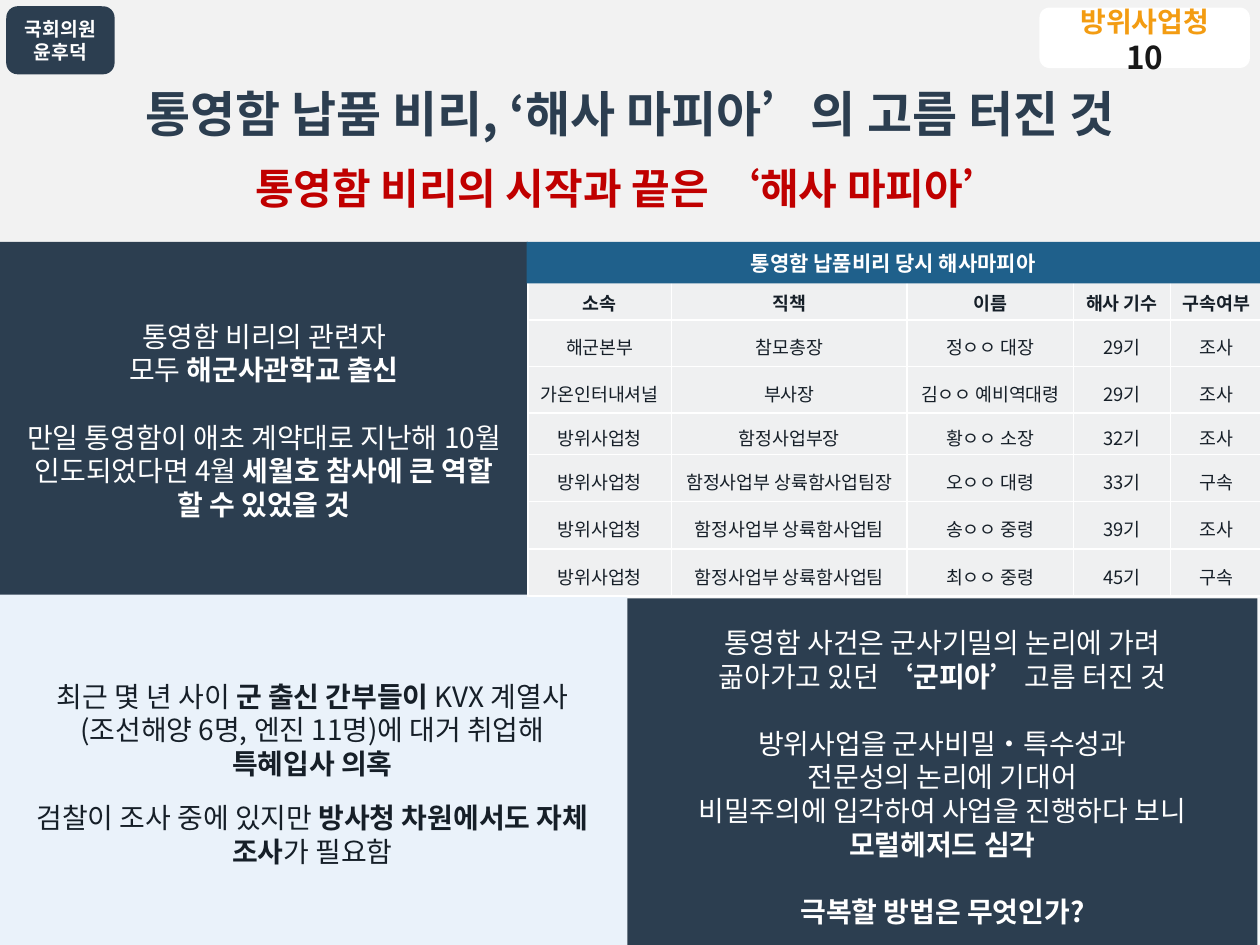
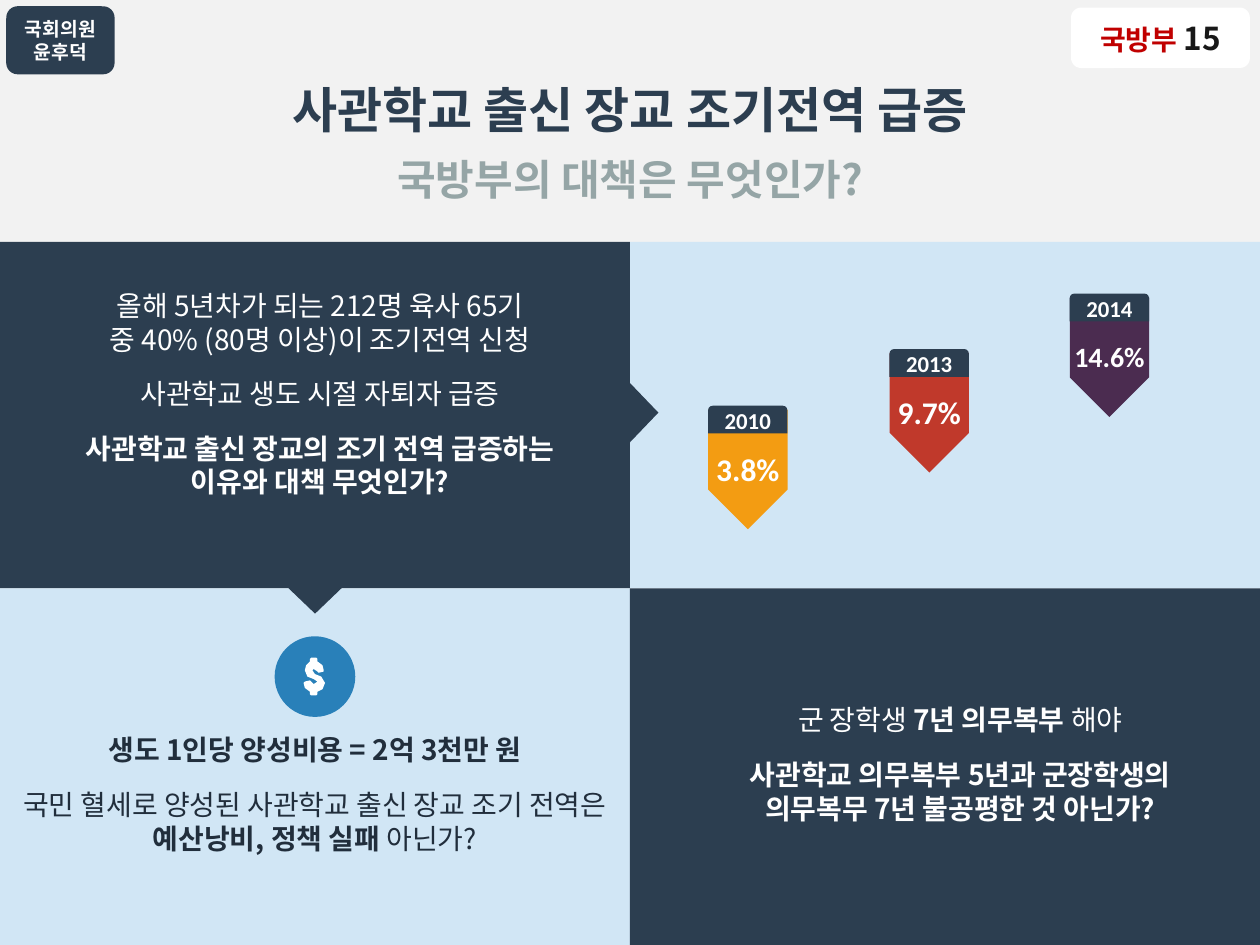
from typing import Any, NamedTuple, Optional

import pptx
import pptx.dml.color
import pptx.enum.shapes
import pptx.enum.text
import pptx.oxml.ns
import pptx.util
from lxml import etree

Inches = pptx.util.Inches
Pt = pptx.util.Pt
RGBColor = pptx.dml.color.RGBColor
Kind = pptx.enum.shapes.MSO_SHAPE
Anchor = pptx.enum.text.MSO_ANCHOR
Align = pptx.enum.text.PP_ALIGN
qn = pptx.oxml.ns.qn

PAPER = RGBColor(0xF9, 0xF9, 0xF9)
BAND = RGBColor(0xF2, 0xF2, 0xF2)
NAVY = RGBColor(0x2C, 0x3E, 0x50)
WHITE = RGBColor(0xFF, 0xFF, 0xFF)
RED = RGBColor(0xC0, 0x00, 0x00)
GRAY = RGBColor(0x95, 0xA5, 0xA6)
AMBER = RGBColor(0xF3, 0x9C, 0x12)
BRICK = RGBColor(0xC0, 0x39, 0x2B)
PLUM = RGBColor(0x4B, 0x2C, 0x50)
BLUE = RGBColor(0x29, 0x80, 0xB9)
STEEL = RGBColor(0x1F, 0x60, 0x8B)
ICE = RGBColor(0xEA, 0xF2, 0xFA)
SKY = RGBColor(0xD1, 0xE6, 0xF5)
CELL = RGBColor(0xEF, 0xF0, 0xF1)
INK = RGBColor(0x16, 0x1F, 0x28)
SLATE = RGBColor(0x21, 0x2E, 0x3C)
COAL = RGBColor(0x18, 0x18, 0x18)
HANGUL = "Noto Sans CJK KR"
LATIN = "Calibri"
LINE = 1.2
BLANK = 19.2


class Run(NamedTuple):
    text: str
    bold: bool = False
    size: Optional[float] = None
    color: Optional[RGBColor] = None


class Para(NamedTuple):
    runs: tuple[Run, ...]
    gap: float = 0


class Style(NamedTuple):
    size: float
    color: RGBColor
    font: str = HANGUL
    lead: float = LINE


class Box(NamedTuple):
    left: float
    top: float
    width: float
    height: float
    fill: Optional[RGBColor] = None
    kind: Any = Kind.RECTANGLE
    turn: float = 0


class Flag(NamedTuple):
    left: float
    top: float
    year: str
    rate: str
    size: float
    fill: RGBColor


BODY = Style(16, WHITE)


def line(*runs: Run, gap: float = 0) -> Para:
    return Para(runs, gap)


def bold(text: str, size: Optional[float] = None, color: Optional[RGBColor] = None) -> Run:
    return Run(text, True, size, color)


def write(frame: Any, paras: list[Para], style: Style) -> None:
    for index, para in enumerate(paras):
        item = frame.add_paragraph() if index else frame.paragraphs[0]
        item.alignment = Align.CENTER
        item.line_spacing = Pt(max(run.size or style.size for run in para.runs) * style.lead)
        item.space_before = Pt(para.gap)
        for run in para.runs:
            for row, part in enumerate(run.text.split("\n")):
                if row:
                    item.add_line_break()
                if not part:
                    continue
                piece = item.add_run()
                piece.text = part
                font = piece.font
                font.size = Pt(run.size or style.size)
                font.bold = run.bold
                font.color.rgb = run.color or style.color
                font.name = style.font
                etree.SubElement(font._element, qn("a:ea")).set("typeface", style.font)


def paint(shape: Any, fill: RGBColor) -> None:
    shape.shadow.inherit = False
    shape.fill.solid()
    shape.fill.fore_color.rgb = fill
    shape.line.fill.background()


def draw(slide: Any, box: Box, paras: Optional[list[Para]] = None, style: Style = BODY,
         head: float = 0.05, side: float = 0.1, anchor: Any = Anchor.MIDDLE) -> None:
    area = [Inches(value) for value in box[:4]]
    if box.fill is None:
        shape = slide.shapes.add_textbox(*area)
    else:
        shape = slide.shapes.add_shape(box.kind, *area)
        paint(shape, box.fill)
        shape.rotation = box.turn
    if paras:
        frame = shape.text_frame
        frame.word_wrap = True
        frame.vertical_anchor = anchor
        frame.margin_top = Inches(head)
        frame.margin_left = Inches(side)
        write(frame, paras, style)


def start(deck: Any, top: float, title: str, sub: str, low: float, tint: RGBColor) -> Any:
    slide = deck.slides.add_slide(deck.slide_layouts[6])
    slide.background.fill.solid()
    slide.background.fill.fore_color.rgb = PAPER
    draw(slide, Box(0, 0, 10, 2, BAND))
    draw(slide, Box(0.05, 0.05, 0.86, 0.54, NAVY, Kind.ROUNDED_RECTANGLE),
         [line(bold("국회의원")), line(bold("윤후덕"))], Style(11, WHITE))
    draw(slide, Box(0, top, 10, 0.57), [line(bold(title))], Style(28, NAVY))
    draw(slide, Box(0, low, 10, 0.5), [line(bold(sub))], Style(24, tint))
    return slide


def badge(slide: Any, left: float, name: str, page: str, tint: RGBColor) -> None:
    draw(slide, Box(left, 0.06, 9.92 - left, 0.48, WHITE, Kind.ROUNDED_RECTANGLE),
         [line(bold(name), bold(page, 18, COAL))], Style(16, tint))


def edge(cell: Any) -> None:
    props = cell._tc.get_or_add_tcPr()
    for index, side in enumerate(("lnL", "lnR", "lnT", "lnB")):
        rule = etree.Element(qn("a:" + side), w=str(Pt(1)))
        fill = etree.SubElement(rule, qn("a:solidFill"))
        etree.SubElement(fill, qn("a:srgbClr"), val=str(WHITE))
        props.insert(index, rule)


def roster(slide: Any) -> None:
    agency, team = "방위사업청", "함정사업부 상륙함사업팀"
    rows = [
        ("소속", "직책", "이름", "해사 기수", "구속여부"),
        ("해군본부", "참모총장", "정ㅇㅇ 대장", "29기", "조사"),
        ("가온인터내셔널", "부사장", "김ㅇㅇ 예비역대령", "29기", "조사"),
        (agency, "함정사업부장", "황ㅇㅇ 소장", "32기", "조사"),
        (agency, team + "장", "오ㅇㅇ 대령", "33기", "구속"),
        (agency, team, "송ㅇㅇ 중령", "39기", "조사"),
        (agency, team, "최ㅇㅇ 중령", "45기", "구속"),
    ]
    wide = (1.14, 1.87, 1.32, 0.77, 0.73)
    tall = (0.34, 0.37, 0.37, 0.33, 0.37, 0.38, 0.37)
    table = slide.shapes.add_table(len(rows), len(wide), Inches(4.19), Inches(2.2),
                                   Inches(sum(wide)), Inches(sum(tall))).table
    for column, width in zip(table.columns, wide):
        column.width = Inches(width)
    for band, height in zip(table.rows, tall):
        band.height = Inches(height)
    for y, row in enumerate(rows):
        for x, text in enumerate(row):
            cell = table.cell(y, x)
            cell.fill.solid()
            cell.fill.fore_color.rgb = CELL
            cell.vertical_anchor = Anchor.MIDDLE
            cell.margin_left = cell.margin_right = Inches(0.07)
            cell.margin_top = Inches(0.06)
            cell.margin_bottom = Inches(0.02)
            write(cell.text_frame, [line(Run(text, y == 0))], Style(10.5, INK, lead=LINE * 1.3))
            edge(cell)


def navy(deck: Any) -> None:
    slide = start(deck, 0.61, "통영함 납품 비리, ‘해사 마피아’의 고름 터진 것",
                  "통영함 비리의 시작과 끝은 ‘해사 마피아’", 1.24, RED)
    draw(slide, Box(0, 1.92, 4.19, 2.83, NAVY), [
        line(Run("통영함 비리의 관련자")),
        line(Run("모두 "), bold("해군사관학교 출신")),
        line(Run("만일 통영함이 애초 계약대로 지난해 10월 인도되었다면 4월 "),
             bold("세월호 참사에 큰 역할\n할 수 있었을 것"), gap=BLANK),
    ])
    draw(slide, Box(-0.02, 4.72, 5, 2.84, ICE), [
        line(Run("최근 몇 년 사이 "), bold("군 출신 간부들이 "),
             Run("KVX 계열사\n(조선해양 6명, 엔진 11명)에 대거 취업해\n"), bold("특혜입사 의혹")),
        line(Run("검찰이 조사 중에 있지만 "), bold("방사청 차원에서도 자체 조사"),
             Run("가 필요함"), gap=12),
    ], Style(16, INK))
    draw(slide, Box(4.98, 4.75, 5, 2.83, NAVY), [
        line(Run("통영함 사건은 군사기밀의 논리에 가려")),
        line(Run("곪아가고 있던 "), bold("‘군피아’ "), Run("고름 터진 것")),
        line(Run("방위사업을 군사비밀•특수성과"), gap=BLANK),
        line(Run("전문성의 논리에 기대어")),
        line(Run("비밀주의에 입각하여 사업을 진행하다 보니\n"), bold("모럴헤저드 심각")),
        line(bold("극복할 방법은 무엇인가?"), gap=BLANK),
    ])
    roster(slide)
    draw(slide, Box(4.18, 1.92, 5.82, 0.33, STEEL),
         [line(bold("통영함 납품비리 당시 해사마피아"))], Style(12, WHITE))
    badge(slide, 8.25, "방위사업청\n", "10", AMBER)


def pennant(slide: Any, flag: Flag) -> None:
    draw(slide, Box(flag.left - 0.16, flag.top + 0.19, 0.95, 0.63, flag.fill, Kind.PENTAGON, 90))
    draw(slide, Box(flag.left, flag.top, 0.63, 0.22, NAVY, Kind.ROUND_2_SAME_RECTANGLE),
         [line(bold(flag.year))], Style(13, WHITE, LATIN))
    draw(slide, Box(flag.left - 0.09, flag.top + 0.3, 0.81, 0.4),
         [line(bold(flag.rate))], Style(flag.size, WHITE, LATIN))


def dollar(slide: Any) -> None:
    draw(slide, Box(2.18, 5.05, 0.64, 0.64, BLUE, Kind.OVAL))
    dots = [
        (253, 534), (252, 533), (249, 531), (248, 532), (250, 535), (255, 537),
        (258, 542), (256, 547), (252, 549), (252, 551), (251, 552), (247, 552),
        (246, 551), (246, 549), (242, 546), (241, 542), (242, 541), (246, 540),
        (247, 541), (249, 543), (252, 541), (249, 539), (244, 537), (242, 532),
        (243, 528), (246, 525), (246, 523), (247, 522), (251, 522), (252, 523),
        (252, 525), (256, 528), (257, 532), (257, 533),
    ]
    pen = slide.shapes.build_freeform(*dots[0], scale=Inches(0.01))
    pen.add_line_segments(dots[1:])
    paint(pen.convert_to_shape(), WHITE)


def cadet(deck: Any) -> None:
    slide = start(deck, 0.58, "사관학교 출신 장교 조기전역 급증",
                  "국방부의 대책은 무엇인가?", 1.17, GRAY)
    draw(slide, Box(5, 1.92, 5, 2.75, SKY))
    draw(slide, Box(0, 1.92, 5, 2.75, NAVY))
    draw(slide, Box(0, 4.67, 5, 2.83, SKY), [
        line(bold("생도 1인당 양성비용 = 2억 3천만 원")),
        line(Run("국민 혈세로 양성된 사관학교 출신 장교 조기 전역은\n"),
             bold("예산낭비, 정책 실패 "), Run("아닌가?"), gap=12),
    ], Style(16, SLATE), head=0.48)
    draw(slide, Box(5, 4.67, 5, 2.83, NAVY))
    draw(slide, Box(0.03, 2.24, 4.52, 1.79), [
        line(Run("올해 5년차가 되는 212명 육사 65기\n중 40% (80명 이상)이 조기전역 신청")),
        line(Run("사관학교 생도 시절 자퇴자 급증"), gap=12),
        line(bold("사관학교 출신 장교의 조기 전역 급증하는\n이유와 대책 무엇인가?"), gap=12),
    ], side=0.6, anchor=Anchor.TOP)
    for flag in (
        Flag(5.62, 3.22, "2010", "3.8%", 18, AMBER),
        Flag(7.06, 2.77, "2013", "9.7%", 18, BRICK),
        Flag(8.49, 2.33, "2014", "14.6%", 16, PLUM),
    ):
        pennant(slide, flag)
    draw(slide, Box(4.87, 3.16, 0.48, 0.23, NAVY, Kind.ISOSCELES_TRIANGLE, 90))
    dollar(slide)
    draw(slide, Box(5.11, 5.53, 4.52, 1.08), [
        line(Run("군 장학생 "), bold("7년 의무복부 "), Run("해야")),
        line(bold("사관학교 의무복부 5년과 군장학생의\n의무복무 7년 불공평한 것 아닌가?"), gap=12),
    ], side=0.6, anchor=Anchor.TOP)
    draw(slide, Box(2.26, 4.64, 0.48, 0.23, NAVY, Kind.ISOSCELES_TRIANGLE, 180))
    badge(slide, 8.5, "국방부 ", "15", RED)


def main() -> None:
    deck = pptx.Presentation()
    deck.slide_width = Inches(10)
    deck.slide_height = Inches(7.5)
    navy(deck)
    cadet(deck)
    deck.save("out.pptx")


if __name__ == "__main__":
    main()
